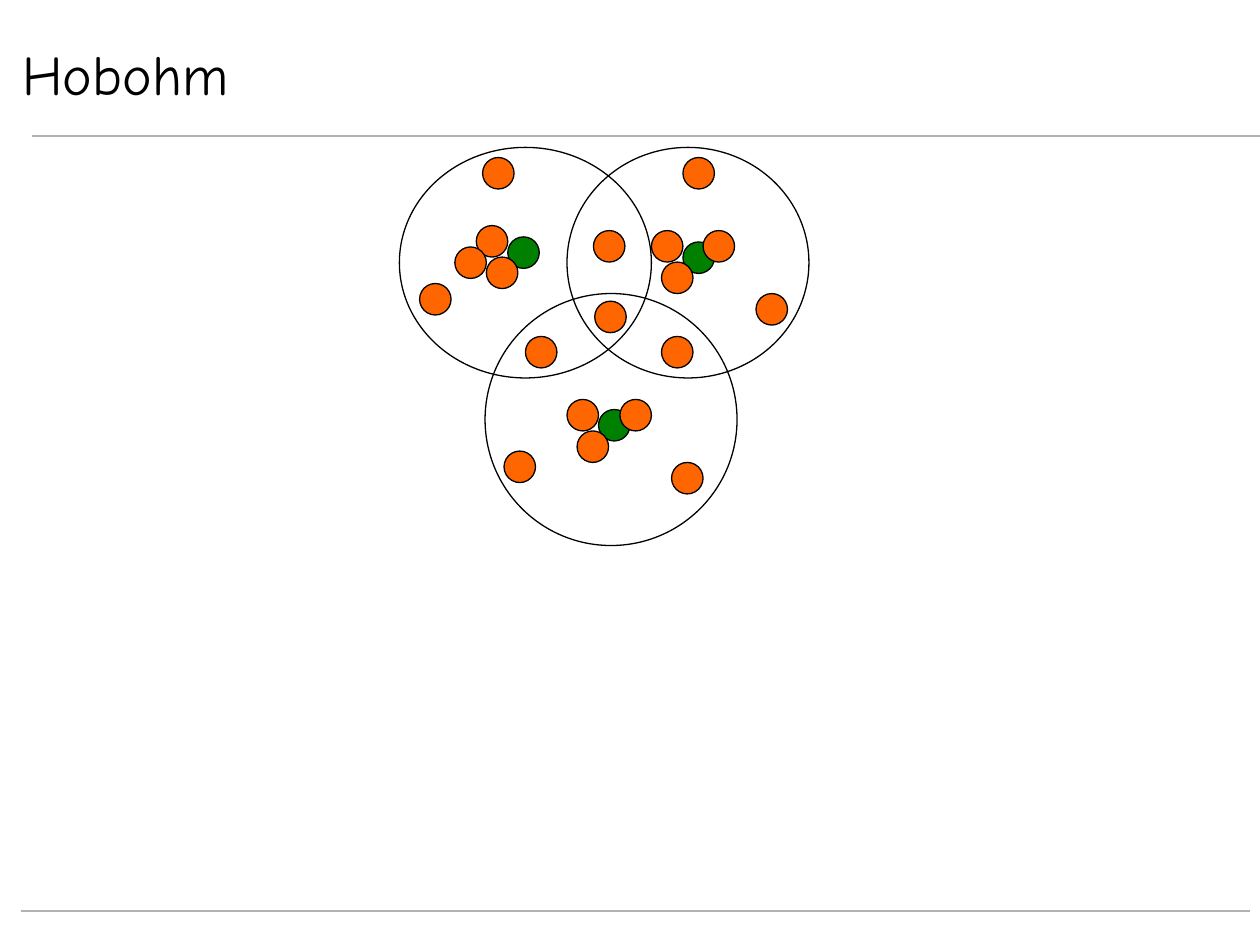
from lxml import etree
from pptx import Presentation
from pptx.dml.color import RGBColor
from pptx.enum import shapes, text
from pptx.oxml.ns import qn
from pptx.util import Inches, Pt

BLACK = RGBColor(0x00, 0x00, 0x00)
WHITE = RGBColor(0xFF, 0xFF, 0xFF)
GREY = RGBColor(0xB2, 0xB2, 0xB2)
ORANGE = RGBColor(0xFF, 0x66, 0x00)
GREEN = RGBColor(0x00, 0x80, 0x00)
DOT = 0.25

# Left and top of each dot; representatives lie beneath their neighbours
REPRESENTATIVES = [(4.03, 1.88), (5.42, 1.92), (4.75, 3.25)]
NEIGHBOURS = [
    # left cluster
    (3.83, 1.25), (3.33, 2.25), (3.86, 2.04), (3.78, 1.79), (3.61, 1.96),
    # right cluster
    (5.42, 1.25), (6, 2.33), (5.25, 2.08), (5.17, 1.83), (5.58, 1.83),
    # bottom cluster
    (4, 3.58), (5.33, 3.67), (4.58, 3.42), (4.5, 3.17), (4.92, 3.17),
    # shared between clusters
    (4.71, 1.83), (4.72, 2.39), (5.25, 2.67), (4.17, 2.67),
]
CLUSTERS = [(3.17, 1.17, 2, 1.83), (3.85, 2.33, 2, 2), (4.5, 1.17, 1.92, 1.83)]


def add_ellipse(parent, left, top, width, height, color=None):
    sp = parent.shapes.add_shape(shapes.MSO_SHAPE.OVAL, Inches(left), Inches(top),
                                 Inches(width), Inches(height))
    sp.shadow.inherit = False
    if color is None:
        sp.fill.background()
    else:
        sp.fill.solid()
        sp.fill.fore_color.rgb = color
    sp.line.color.rgb = BLACK
    sp.line.width = Pt(0.75)


prs = Presentation()
prs.slide_width, prs.slide_height = Inches(10), Inches(7.5)
s = prs.slides.add_slide(prs.slide_layouts[6])

# Rules above and below the content
for left, right, y in [(0.25, 10, 1.08), (0.17, 9.92, 7.23)]:
    rule = s.shapes.add_connector(shapes.MSO_CONNECTOR.STRAIGHT, Inches(left), Inches(y),
                                  Inches(right), Inches(y))
    rule.line.color.rgb = GREY
    rule.line.width = Pt(1.5)
    etree.SubElement(rule._element.spPr, qn("a:effectLst"))

# Title
title = s.shapes.add_textbox(Inches(0.08), Inches(0.33), Inches(7.83), Inches(0.5))
title.fill.solid()
title.fill.fore_color.rgb = WHITE
title.line.color.rgb = WHITE
title.line.width = Pt(0.75)
tf = title.text_frame
tf.word_wrap = True
tf.vertical_anchor = text.MSO_ANCHOR.MIDDLE
tf.text = "Hobohm"
font = tf.paragraphs[0].runs[0].font
font.name = "Comic Neue"
font.size = Pt(32)
font.color.rgb = BLACK

# Overlapping clusters
diagram = s.shapes.add_group_shape()
for color, dots in [(GREEN, REPRESENTATIVES), (ORANGE, NEIGHBOURS)]:
    for left, top in dots:
        add_ellipse(diagram, left, top, DOT, DOT, color)
for cluster in CLUSTERS:
    add_ellipse(diagram, *cluster)

prs.save("out.pptx")
